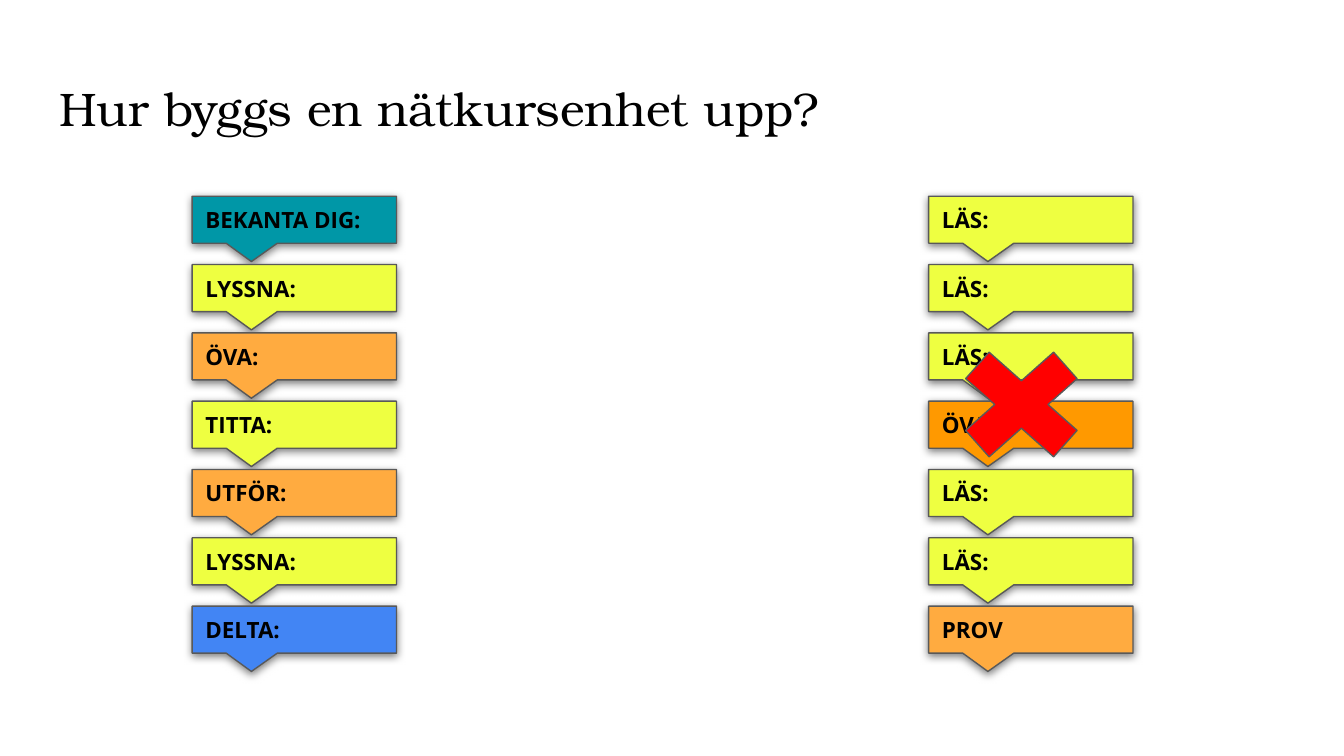
from lxml.etree import SubElement
from pptx import Presentation
from pptx.dml.color import RGBColor
from pptx.enum.shapes import MSO_SHAPE as Shape
from pptx.enum.text import MSO_ANCHOR as Anchor, MSO_AUTO_SIZE as AutoSize, PP_ALIGN as Align
from pptx.oxml.ns import qn
from pptx.util import Inches, Pt

COLORS = {
    "text": "000000", "outline": "595959", "background": "FFFFFF",
    "teal": "0097A7", "yellow": "EEFF41", "orange": "FFAB40",
    "dark orange": "FF9900", "blue": "4285F4", "red": "FF0000",
}

# Widescreen slide, 16 to 9
SLIDE_WIDTH = Inches(10)
SLIDE_HEIGHT = SLIDE_WIDTH * 9 // 16

# Grid of steps, in inches
COLUMN_LEFTS = (1.43, 6.91)
FIRST_TOP, LAST_TOP = 1.46, 4.51
STEP_WIDTH, STEP_HEIGHT = 1.52, 0.35

ACTIVE_COURSE = [
    ("BEKANTA DIG:", "teal"), ("LYSSNA:", "yellow"), ("ÖVA:", "orange"),
    ("TITTA:", "yellow"), ("UTFÖR:", "orange"), ("LYSSNA:", "yellow"),
    ("DELTA:", "blue"),
]
READING_COURSE = [
    ("LÄS:", "yellow"), ("LÄS:", "yellow"), ("LÄS:", "yellow"),
    ("ÖVA:", "dark orange"), ("LÄS:", "yellow"), ("LÄS:", "yellow"),
    ("PROV", "orange"),
]

TITLE_FONT = {"name": "TeX Gyre Bonum", "size": Pt(25.2), "bold": False}
STEP_FONT = {"name": "Open Sans", "size": Pt(12), "bold": True}


def color(name):
    return RGBColor.from_string(COLORS[name])


def set_attributes(target, values):
    for name, value in values.items():
        setattr(target, name, value)


def write_text(shape, text, font, anchor):
    margin = Inches(0.1)
    frame = shape.text_frame
    set_attributes(frame, {
        "text": text, "word_wrap": True, "auto_size": AutoSize.NONE,
        "vertical_anchor": anchor, "margin_left": margin,
        "margin_right": margin, "margin_top": margin, "margin_bottom": margin,
    })
    paragraph = frame.paragraphs[0]
    paragraph.alignment = Align.LEFT
    run_font = paragraph.runs[0].font
    set_attributes(run_font, font)
    run_font.color.rgb = color("text")


def add_shadow(shape):
    effects = shape._element.spPr.find(qn("a:effectLst"))
    shadow = SubElement(effects, qn("a:outerShdw"), {
        "blurRad": str(Pt(4.5)), "dist": str(Pt(1.5)),
        "dir": "5400000", "algn": "bl", "rotWithShape": "0",
    })
    shade = SubElement(shadow, qn("a:srgbClr"), val=COLORS["text"])
    SubElement(shade, qn("a:alpha"), val="50000")


def add_outlined_shape(slide, kind, box, fill):
    shape = slide.shapes.add_shape(kind, *map(Inches, box))
    shape.shadow.inherit = False
    shape.fill.solid()
    shape.fill.fore_color.rgb = color(fill)
    shape.line.color.rgb = color("outline")
    shape.line.width = Pt(0.75)
    return shape


def add_steps(slide, left, steps):
    pitch = (LAST_TOP - FIRST_TOP) / (len(steps) - 1)
    for row, (label, fill) in enumerate(steps):
        box = (left, FIRST_TOP + row * pitch, STEP_WIDTH, STEP_HEIGHT)
        step = add_outlined_shape(slide, Shape.RECTANGULAR_CALLOUT, box, fill)
        step.adjustments[0] = -0.21
        step.adjustments[1] = 0.89
        add_shadow(step)
        write_text(step, label, STEP_FONT, Anchor.MIDDLE)


def add_title(slide, text):
    title = slide.shapes.title
    set_attributes(title, {
        "left": Inches(0.34), "top": Inches(0.49),
        "width": Inches(9.32), "height": Inches(0.63),
    })
    write_text(title, text, TITLE_FONT, Anchor.TOP)


def main():
    presentation = Presentation()
    presentation.slide_width = SLIDE_WIDTH
    presentation.slide_height = SLIDE_HEIGHT
    slide = presentation.slides.add_slide(presentation.slide_layouts[5])
    slide.background.fill.solid()
    slide.background.fill.fore_color.rgb = color("background")

    add_title(slide, "Hur byggs en nätkursenhet upp?")

    # The two course structures
    for left, steps in zip(COLUMN_LEFTS, (ACTIVE_COURSE, READING_COURSE)):
        add_steps(slide, left, steps)

    # Cross over the discouraged structure
    add_outlined_shape(
        slide, Shape.MATH_MULTIPLY, (6.97, 2.45, 1.26, 1.12), "red")

    presentation.save("out.pptx")


if __name__ == "__main__":
    main()
